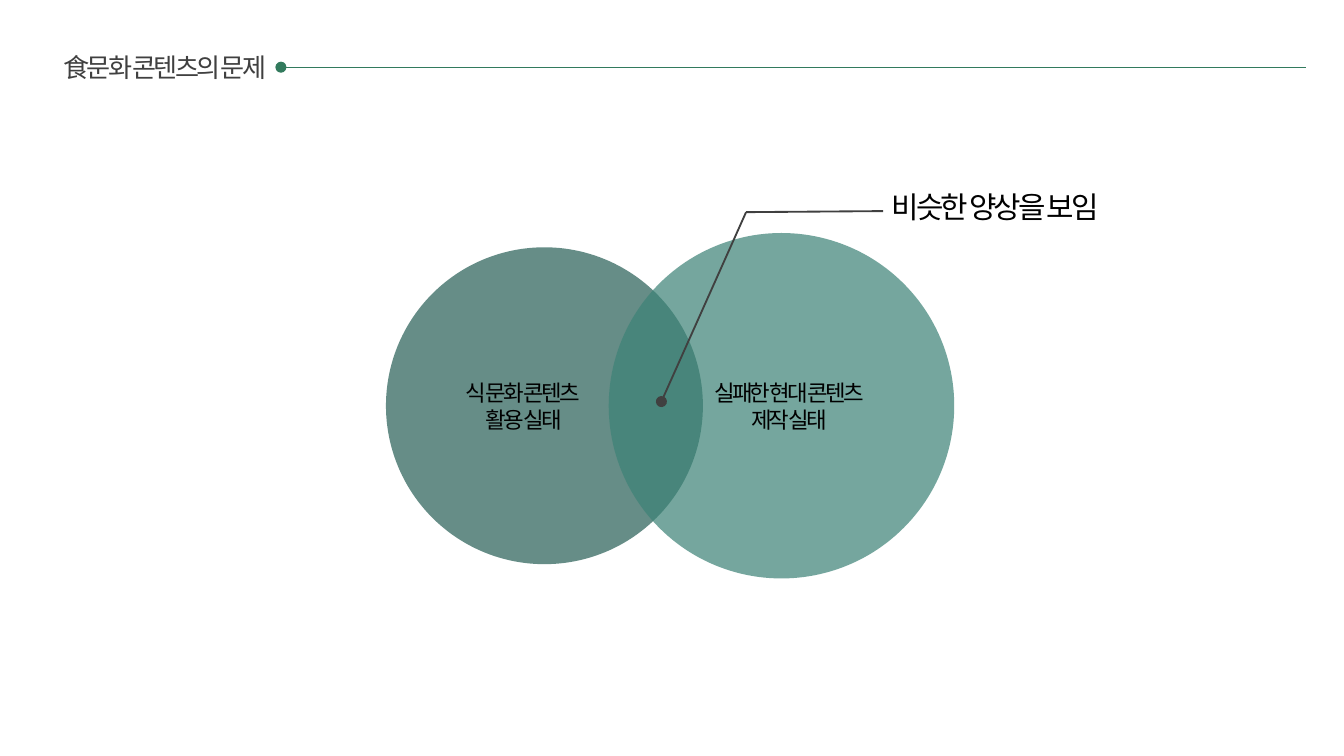
from dataclasses import dataclass

from lxml import etree
from pptx import Presentation
from pptx import util as u
from pptx.dml.color import RGBColor
from pptx.enum import shapes, text
from pptx.oxml import ns
from pptx.slide import Slide

FONT = "Noto Sans CJK KR"
BLACK = RGBColor(0x00, 0x00, 0x00)
CHARCOAL = RGBColor(0x40, 0x40, 0x40)
LINE_GREEN = RGBColor(0x32, 0x7A, 0x5D)
DARK_TEAL = RGBColor(0x2E, 0x64, 0x5B)
LIGHT_TEAL = RGBColor(0x3D, 0x83, 0x77)
CIRCLE_MIDDLE = 7.67  # shared vertical centre, cm
LETTER_SPACING = -150  # hundredths of a point


@dataclass
class Label:
    """A centred text box; lengths in cm, size in points."""
    lines: list[str]
    left: float
    top: float
    width: float
    height: float
    size: int
    color: RGBColor = BLACK


@dataclass
class Circle:
    """A translucent circle with its label; lengths in cm."""
    center: float
    diameter: float
    color: RGBColor
    opacity: int
    label: Label


@dataclass
class Line:
    """A straight line; points in cm, width in points."""
    start: tuple[float, float]
    end: tuple[float, float]
    color: RGBColor
    width: float
    dot: bool = False


def draw_label(slide: Slide, label: Label) -> None:
    box = slide.shapes.add_textbox(
        u.Cm(label.left), u.Cm(label.top), u.Cm(label.width), u.Cm(label.height))
    frame = box.text_frame
    frame.word_wrap = True
    frame.auto_size = text.MSO_AUTO_SIZE.SHAPE_TO_FIT_TEXT
    frame.text = "\n".join(label.lines)
    for paragraph in frame.paragraphs:
        paragraph.alignment = text.PP_ALIGN.CENTER
        paragraph.font.name = FONT
        paragraph.font.size = u.Pt(label.size)
        paragraph.font.color.rgb = label.color
        # Letter spacing and the East Asian typeface
        for run in paragraph.runs:
            properties = run._r.get_or_add_rPr()
            properties.set("spc", str(LETTER_SPACING))
            etree.SubElement(properties, ns.qn("a:ea"), typeface=FONT)


def draw_circle(slide: Slide, circle: Circle) -> None:
    radius = circle.diameter / 2
    shape = slide.shapes.add_shape(
        shapes.MSO_SHAPE.OVAL,
        u.Cm(circle.center - radius), u.Cm(CIRCLE_MIDDLE - radius),
        u.Cm(circle.diameter), u.Cm(circle.diameter))
    shape.shadow.inherit = False
    shape.line.fill.background()
    shape.fill.solid()
    shape.fill.fore_color.rgb = circle.color
    color = shape._element.spPr.find(f"{ns.qn('a:solidFill')}/{ns.qn('a:srgbClr')}")
    etree.SubElement(color, ns.qn("a:alpha"), val=str(circle.opacity * 1000))
    draw_label(slide, circle.label)


def draw_line(slide: Slide, line: Line) -> None:
    connector = slide.shapes.add_connector(
        shapes.MSO_CONNECTOR.STRAIGHT,
        *(u.Cm(value) for value in line.start + line.end))
    connector.line.color.rgb = line.color
    connector.line.width = u.Pt(line.width)
    if line.dot:
        etree.SubElement(connector.line._get_or_add_ln(), ns.qn("a:headEnd"), type="oval")
    etree.SubElement(connector._element.spPr, ns.qn("a:effectLst"))


def main() -> None:
    presentation = Presentation()
    presentation.slide_width = u.Cm(25.4)
    presentation.slide_height = u.Cm(14.29)
    slide = presentation.slides.add_slide(presentation.slide_layouts[6])

    # Heading
    draw_line(slide, Line((5.31, 1.27), (24.69, 1.27), LINE_GREEN, 0.75, dot=True))
    draw_label(slide, Label(["食문화 콘텐츠의 문제"], 0.51, 0.84, 5.21, 0.86, 14, CHARCOAL))

    # Overlapping circles
    circles = [
        Circle(10.29, 5.99, DARK_TEAL, 73,
               Label(["식 문화 콘텐츠 ", "활용 실태"], 6.5, 7.04, 6.81, 1.27, 12)),
        Circle(14.77, 6.53, LIGHT_TEAL, 71,
               Label(["실패한 현대 콘텐츠", "제작 실태"], 11.51, 7.04, 6.81, 1.27, 12)),
    ]
    for circle in circles:
        draw_circle(slide, circle)

    # Callout from the overlap
    bend = (14.1, 4.01)
    draw_line(slide, Line((12.5, 7.59), bend, CHARCOAL, 1, dot=True))
    draw_line(slide, Line(bend, (16.69, 3.99), CHARCOAL, 1))
    draw_label(slide, Label(["비슷한 양상을 보임"], 16.31, 3.45, 5, 0.94, 16))

    presentation.save("out.pptx")


if __name__ == "__main__":
    main()
